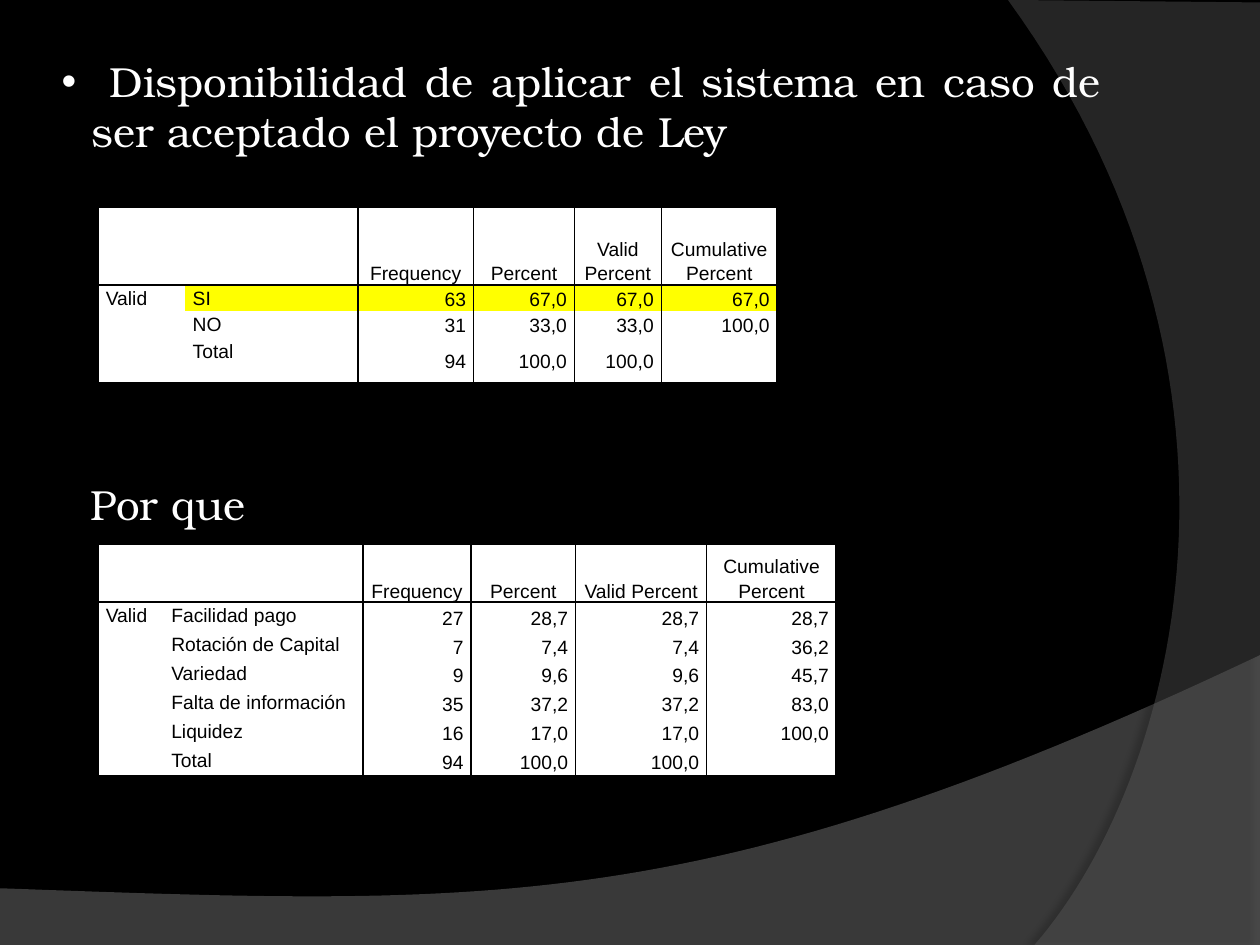
from lxml import etree
from pptx import Presentation
from pptx.dml.color import RGBColor
from pptx.enum.text import MSO_ANCHOR, PP_ALIGN
from pptx.oxml.ns import qn
from pptx.util import Inches, Pt

LEFT, CENTER, RIGHT, JUSTIFY = (
    PP_ALIGN.LEFT, PP_ALIGN.CENTER, PP_ALIGN.RIGHT, PP_ALIGN.JUSTIFY)
TOP, MIDDLE, BOTTOM = MSO_ANCHOR.TOP, MSO_ANCHOR.MIDDLE, MSO_ANCHOR.BOTTOM

BLACK = RGBColor(0x00, 0x00, 0x00)
WHITE = RGBColor(0xFF, 0xFF, 0xFF)
YELLOW = RGBColor(0xFF, 0xFF, 0x00)
GRAY = RGBColor(0x7F, 0x7F, 0x7F)
DARK_GRAY = RGBColor(0x5E, 0x5E, 0x5E)

HEADING = {"name": "TeX Gyre Bonum", "size": Pt(24)}
CELL = {"name": "Arial", "size": Pt(11)}
MARGINS = {"margin_left": Inches(0.06), "margin_right": Inches(0.06),
           "margin_top": 0, "margin_bottom": 0}
COLUMN_EDGES = [1.5, 0, 1.5, 1, 1, 1, 1.5]

HEADERS = ["", "", "Frequency", "Percent", "Valid Percent", "Cumulative Percent"]
AVAILABILITY = [
    HEADERS,
    ["Valid", "SI", "63", "67,0", "67,0", "67,0"],
    ["", "NO", "31", "33,0", "33,0", "100,0"],
    ["", "Total", "94", "100,0", "100,0", ""],
]
REASONS = [
    HEADERS,
    ["Valid", "Facilidad pago", "27", "28,7", "28,7", "28,7"],
    ["", "Rotación de Capital", "7", "7,4", "7,4", "36,2"],
    ["", "Variedad", "9", "9,6", "9,6", "45,7"],
    ["", "Falta de información", "35", "37,2", "37,2", "83,0"],
    ["", "Liquidez", "16", "17,0", "17,0", "100,0"],
    ["", "Total", "94", "100,0", "100,0", ""],
]


def add_xml(parent, tag, **attrs):
    child = etree.SubElement(parent, qn(tag))
    for name, value in attrs.items():
        child.set(name, str(value))
    return child


def set_attributes(target, values):
    for name, value in values.items():
        setattr(target, name, value)


def bezier(start, c1, c2, end, steps=60):
    points = []
    for i in range(1, steps + 1):
        t = i / steps
        u = 1 - t
        weights = (u ** 3, 3 * u * u * t, 3 * u * t * t, t ** 3)
        points.append(tuple(
            sum(w * v for w, v in zip(weights, axis))
            for axis in zip(start, c1, c2, end)))
    return points


def add_swoosh(slide, points, color, alpha, shadow_alpha, distance, direction):
    emu = [(Inches(x), Inches(y)) for x, y in points]
    builder = slide.shapes.build_freeform(*emu[0])
    builder.add_line_segments(emu[1:], close=True)
    s = builder.convert_to_shape()
    s.fill.solid()
    s.fill.fore_color.rgb = color
    s.line.fill.background()
    s.shadow.inherit = False
    props = s.element.spPr
    add_xml(props.find(qn("a:solidFill")).find(qn("a:srgbClr")),
            "a:alpha", val=alpha * 1000)
    shadow = add_xml(props.find(qn("a:effectLst")), "a:outerShdw",
                     blurRad=Pt(4), dist=Pt(distance),
                     dir=direction * 60000, rotWithShape=0)
    shadow_color = add_xml(shadow, "a:srgbClr", val=BLACK)
    add_xml(shadow_color, "a:alpha", val=shadow_alpha * 1000)


def add_heading(slide, text, left, top, height, bullet=False):
    s = slide.shapes.add_textbox(
        Inches(left), Inches(top), Inches(8.44), Inches(height))
    tf = s.text_frame
    tf.word_wrap = True
    p = tf.paragraphs[0]
    p.alignment = JUSTIFY
    if bullet:
        props = p._p.get_or_add_pPr()
        props.set("marL", str(Inches(0.24)))
        props.set("indent", str(-Inches(0.24)))
        add_xml(props, "a:buFont", typeface="Arial")
        add_xml(props, "a:buChar", char="•")
    r = p.add_run()
    r.text = text
    set_attributes(r.font, HEADING)
    r.font.color.rgb = WHITE


def set_borders(cell, widths):
    props = cell._tc.get_or_add_tcPr()
    for side, width in zip("LRTB", widths):
        line = add_xml(props, f"a:ln{side}", w=Pt(width))
        if width:
            fill = add_xml(line, "a:solidFill")
            add_xml(fill, "a:srgbClr", val=BLACK)
        else:
            add_xml(line, "a:noFill")


def write_cell(cell, text, alignment, anchor):
    set_attributes(cell, MARGINS)
    cell.vertical_anchor = anchor
    p = cell.text_frame.paragraphs[0]
    set_attributes(p, {"alignment": alignment, "line_spacing": 1.15})
    if text:
        r = p.add_run()
        r.text = text
        set_attributes(r.font, CELL)
        r.font.color.rgb = BLACK
    else:
        add_xml(p._p, "a:endParaRPr", sz=1100)


def add_data_table(slide, rows, top, widths, heights, highlight=None):
    s = slide.shapes.add_table(
        len(rows), len(widths), Inches(0.78), Inches(top),
        Inches(sum(widths)), Inches(sum(heights)))
    table = s.table
    set_attributes(table, {"first_row": False, "horz_banding": False})
    for column, width in zip(table.columns, widths):
        column.width = Inches(width)
    for row, height in zip(table.rows, heights):
        row.height = Inches(height)
    row_edges = [1.5, 1.5] + [0] * (len(rows) - 2) + [1.5]
    for i, values in enumerate(rows):
        for j, text in enumerate(values):
            cell = table.cell(i, j)
            if i == 0:
                layout = CENTER, BOTTOM
            else:
                layout = (LEFT, TOP) if j < 2 else (RIGHT, MIDDLE)
            write_cell(cell, text, *layout)
            set_borders(cell, COLUMN_EDGES[j:j + 2] + row_edges[i:i + 2])
            cell.fill.solid()
            marked = i == highlight and j > 0
            cell.fill.fore_color.rgb = YELLOW if marked else WHITE
    table.cell(0, 0).merge(table.cell(0, 1))


def main():
    prs = Presentation()
    prs.slide_width, prs.slide_height = Inches(10), Inches(7.5)
    slide = prs.slides.add_slide(prs.slide_layouts[6])
    slide.background.fill.solid()
    slide.background.fill.fore_color.rgb = BLACK

    wave = [(0, 7.05), (0, 7.5), (10, 7.5), (10, 5.2)]
    wave += bezier((10, 5.2), (5.59, 7.29), (3.91, 7.19), (0, 7.05))
    add_swoosh(slide, wave, GRAY, 45, 35, 3.5, 270)
    arc = [(10, 0.02), (10, 7.5), (8.21, 7.5)]
    arc += bezier((8.21, 7.5), (9.35, 6.19), (10.18, 3), (8, 0))
    add_swoosh(slide, arc, DARK_GRAY, 40, 45, 4, 180)

    add_heading(slide, " Disponibilidad de aplicar el sistema en caso de "
                "ser aceptado el proyecto de Ley", 0.39, 0.39, 2.52, bullet=True)
    add_data_table(slide, AVAILABILITY, 1.64,
                   [0.69, 1.37, 0.92, 0.8, 0.69, 0.92],
                   [0.62, 0.2, 0.2, 0.36], highlight=1)
    add_data_table(slide, REASONS, 4.32,
                   [0.52, 1.58, 0.86, 0.83, 1.04, 1.03],
                   [0.46] + [0.23] * 6)
    add_heading(slide, "Por que", 0.62, 3.75, 2.12)
    prs.save("out.pptx")


if __name__ == "__main__":
    main()
